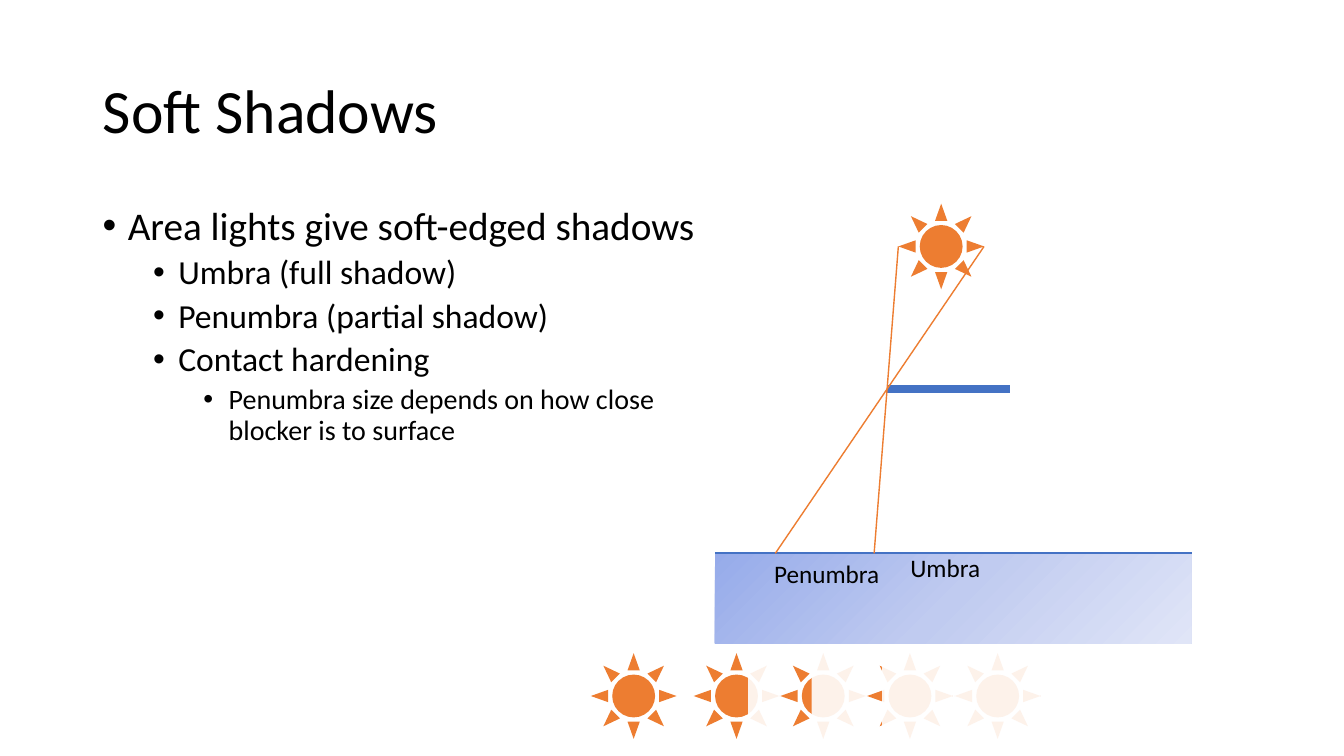
from copy import deepcopy
from dataclasses import dataclass

from lxml.etree import SubElement
from pptx import Presentation
from pptx.dml.color import RGBColor
from pptx.enum.dml import MSO_LINE
from pptx.enum.shapes import MSO_CONNECTOR, MSO_SHAPE
from pptx.enum.text import MSO_ANCHOR, MSO_AUTO_SIZE, PP_ALIGN
from pptx.oxml.ns import qn
from pptx.shapes.autoshape import Shape
from pptx.slide import Slide
from pptx.text.text import TextFrame, _Paragraph as Paragraph
from pptx.util import Inches, Pt

FONT = "Calibri"
BLACK = RGBColor(0x00, 0x00, 0x00)
WHITE = RGBColor(0xFF, 0xFF, 0xFF)
BLUE = RGBColor(0x44, 0x72, 0xC4)
ORANGE = RGBColor(0xED, 0x7D, 0x31)
GROUND_STOPS = [
    (0.0, RGBColor(0x96, 0xAB, 0xEA)),
    (0.5, RGBColor(0xC0, 0xCB, 0xF0)),
    (1.0, RGBColor(0xE0, 0xE5, 0xF7)),
]

SUN_SIZE = 0.85
LIGHT_LEFT, LIGHT_TOP = 8.91, 2.02
LIGHT_MID = LIGHT_TOP + SUN_SIZE / 2
GROUND_LEFT, GROUND_TOP, GROUND_WIDTH, GROUND_HEIGHT = 7.09, 5.49, 4.73, 0.89
GROUND_RIGHT = GROUND_LEFT + GROUND_WIDTH
BLOCKER_Y = 3.86
VISIBILITY_TOP = 6.48


@dataclass(frozen=True)
class Bullet:
    text: str
    level: int
    size: int
    space_before: int


@dataclass(frozen=True)
class Segment:
    x1: float
    y1: float
    x2: float
    y2: float
    color: RGBColor
    width: float


@dataclass(frozen=True)
class Label:
    text: str
    left: float
    top: float
    width: float


@dataclass(frozen=True)
class VisibleSun:
    """A sun in the bottom row and the width hidden at its right side."""
    left: float
    hidden: float


BULLETS = [
    Bullet("Area lights give soft-edged shadows", 0, 28, 10),
    Bullet("Umbra (full shadow)", 1, 24, 5),
    Bullet("Penumbra (partial shadow)", 1, 24, 5),
    Bullet("Contact hardening", 1, 24, 5),
    Bullet("Penumbra size depends on how close\vblocker is to surface", 2, 20, 5),
]
SURFACES = [
    Segment(GROUND_LEFT, GROUND_TOP, GROUND_RIGHT, GROUND_TOP, BLUE, 1.5),
    Segment(8.8, BLOCKER_Y, 10.02, BLOCKER_Y, BLUE, 6),
]
RAYS = [
    Segment(LIGHT_LEFT, LIGHT_MID, 8.67, GROUND_TOP, ORANGE, 1),
    Segment(LIGHT_LEFT + SUN_SIZE, LIGHT_MID, 7.69, GROUND_TOP, ORANGE, 1),
]
LABELS = [
    Label("Umbra", 8.93, 5.43, 0.9),
    Label("Penumbra", 7.58, 5.49, 1.26),
]
VISIBLE_SUNS = [
    VisibleSun(5.86, 0),
    VisibleSun(6.88, 0.31),
    VisibleSun(7.74, 0.54),
    VisibleSun(8.6, 0.7),
    VisibleSun(9.47, SUN_SIZE),
]


def format_runs(p: Paragraph, size: int) -> None:
    for r in p.runs:
        r.font.name = FONT
        r.font.size = Pt(size)
        r.font.color.rgb = BLACK


def add_shape(slide: Slide, kind: MSO_SHAPE, left: float, top: float,
              width: float, height: float, color: RGBColor) -> Shape:
    sp = slide.shapes.add_shape(kind, Inches(left), Inches(top), Inches(width), Inches(height))
    sp.shadow.inherit = False
    sp.fill.solid()
    sp.fill.fore_color.rgb = color
    sp.line.fill.background()
    return sp


def add_sun(slide: Slide, left: float, top: float) -> None:
    add_shape(slide, MSO_SHAPE.SUN, left, top, SUN_SIZE, SUN_SIZE, ORANGE)


def add_veil(slide: Slide, sun: VisibleSun) -> None:
    """Fade the hidden right part of a sun with 90% white."""
    left = sun.left + SUN_SIZE - sun.hidden
    sp = add_shape(slide, MSO_SHAPE.RECTANGLE, left, VISIBILITY_TOP, sun.hidden, SUN_SIZE, WHITE)
    color = sp._element.spPr.find(qn("a:solidFill"))[0]
    SubElement(color, qn("a:alpha"), val="90000")


def add_ground(slide: Slide) -> None:
    sp = add_shape(slide, MSO_SHAPE.RECTANGLE, GROUND_LEFT, GROUND_TOP,
                   GROUND_WIDTH, GROUND_HEIGHT, BLUE)
    sp.fill.gradient()
    sp.fill.gradient_angle = 315
    stop_list = sp._element.spPr.find(qn("a:gradFill")).find(qn("a:gsLst"))
    stop_list.append(deepcopy(stop_list[0]))
    for stop, (position, color) in zip(sp.fill.gradient_stops, GROUND_STOPS):
        stop.position = position
        stop.color.rgb = color


def add_segment(slide: Slide, segment: Segment) -> None:
    line = slide.shapes.add_connector(
        MSO_CONNECTOR.STRAIGHT, Inches(segment.x1), Inches(segment.y1),
        Inches(segment.x2), Inches(segment.y2))
    line.line.color.rgb = segment.color
    line.line.width = Pt(segment.width)
    line.line.dash_style = MSO_LINE.SOLID
    SubElement(line._element.spPr, qn("a:effectLst"))


def add_label(slide: Slide, label: Label) -> None:
    box = slide.shapes.add_textbox(Inches(label.left), Inches(label.top),
                                   Inches(label.width), Inches(0.4))
    tf = box.text_frame
    tf.word_wrap = False
    tf.auto_size = MSO_AUTO_SIZE.SHAPE_TO_FIT_TEXT
    tf.text = label.text
    format_runs(tf.paragraphs[0], 18)


def set_title(slide: Slide, text: str) -> None:
    title = slide.shapes.title
    title.left, title.top = Inches(0.92), Inches(0.4)
    title.width, title.height = Inches(11.5), Inches(1.45)
    tf = title.text_frame
    tf.text = text
    tf.auto_size = MSO_AUTO_SIZE.NONE
    tf.vertical_anchor = MSO_ANCHOR.MIDDLE
    p = tf.paragraphs[0]
    p.alignment = PP_ALIGN.LEFT
    p.line_spacing = 0.9
    format_runs(p, 44)


def add_bullet(tf: TextFrame, bullet: Bullet, first: bool) -> None:
    p = tf.paragraphs[0] if first else tf.add_paragraph()
    p.text = bullet.text
    p.level = bullet.level
    p.line_spacing = 0.9
    p.space_before = Pt(bullet.space_before)
    format_runs(p, bullet.size)
    p_pr = p._p.get_or_add_pPr()
    p_pr.set("marL", str(Inches(0.25 + 0.5 * bullet.level)))
    p_pr.set("indent", str(Inches(-0.25)))
    SubElement(p_pr, qn("a:buFont"), typeface="Arial")
    SubElement(p_pr, qn("a:buChar"), char="•")


def main() -> None:
    prs = Presentation()
    prs.slide_width, prs.slide_height = Inches(13.33), Inches(7.5)
    s = prs.slides.add_slide(prs.slide_layouts[5])

    add_ground(s)
    set_title(s, "Soft Shadows")
    body = s.shapes.add_textbox(Inches(0.92), Inches(2), Inches(11.5), Inches(4.76))
    body.text_frame.word_wrap = True
    for i, bullet in enumerate(BULLETS):
        add_bullet(body.text_frame, bullet, first=i == 0)

    for surface in SURFACES:
        add_segment(s, surface)
    add_sun(s, LIGHT_LEFT, LIGHT_TOP)
    for ray in RAYS:
        add_segment(s, ray)
    for label in LABELS:
        add_label(s, label)

    for sun in VISIBLE_SUNS:
        add_sun(s, sun.left, VISIBILITY_TOP)
        if sun.hidden:
            add_veil(s, sun)

    prs.save("out.pptx")


if __name__ == "__main__":
    main()
